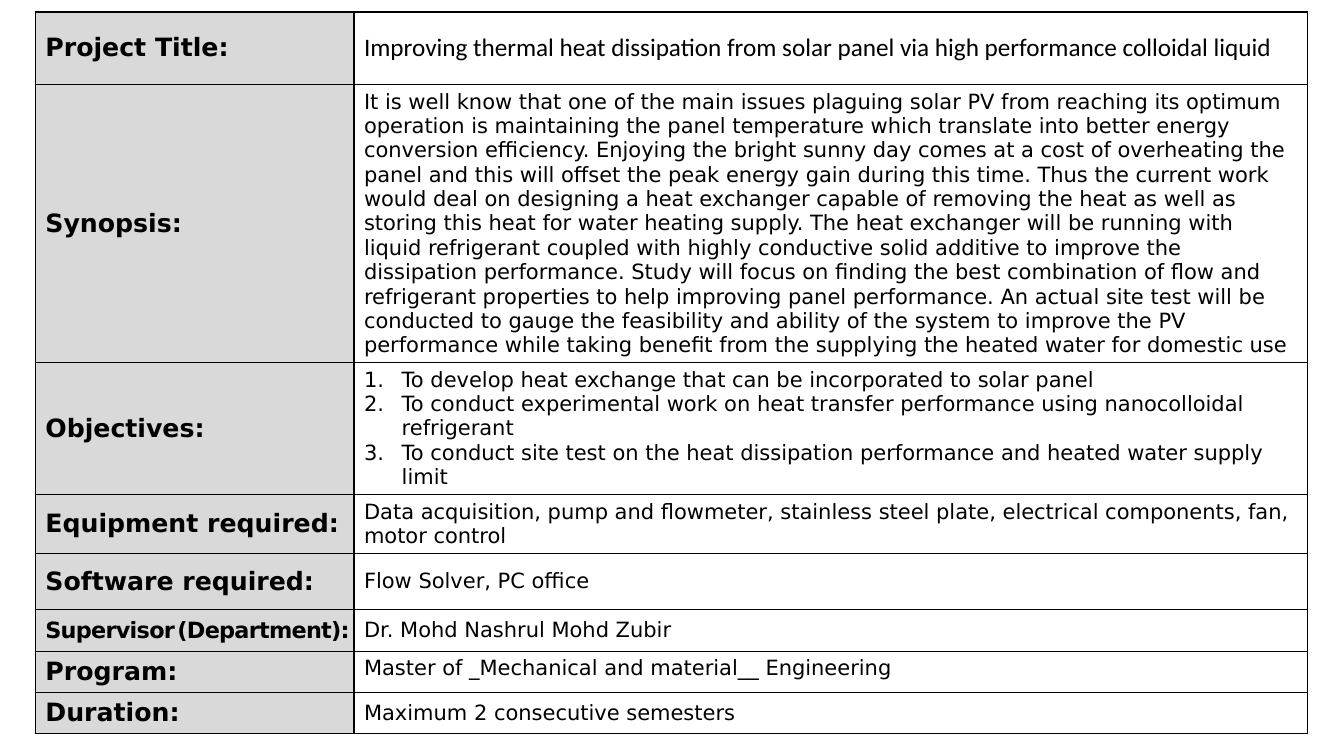
from lxml import etree
from pptx import Presentation
from pptx.dml.color import RGBColor
from pptx.enum.text import MSO_ANCHOR
from pptx.oxml.ns import qn
from pptx.util import Cm, Pt

MIDDLE, TOP = MSO_ANCHOR.MIDDLE, MSO_ANCHOR.TOP
BLACK = RGBColor(0x00, 0x00, 0x00)
GREY = RGBColor(0xD9, 0xD9, 0xD9)
SANS = "DejaVu Sans"
LABEL = {"name": SANS, "size": Pt(18), "bold": True}
BODY = {"name": SANS, "size": Pt(15), "bold": False}
TITLE = {"name": "Calibri", "size": Pt(18), "bold": False}

SYNOPSIS = [
    "It is well know that one of the main issues plaguing solar PV from reaching its optimum",
    "operation is maintaining the panel temperature which translate into better energy",
    "conversion efficiency. Enjoying the bright sunny day comes at a cost of overheating the",
    "panel and this will offset the peak energy gain during this time. Thus the current work",
    "would deal on designing a heat exchanger capable of removing the heat as well as",
    "storing this heat for water heating supply. The heat exchanger will be running with",
    "liquid refrigerant coupled with highly conductive solid additive to improve the",
    "dissipation performance. Study will focus on finding the best combination of flow and",
    "refrigerant properties to help improving panel performance. An actual site test will be",
    "conducted to gauge the feasibility and ability of the system to improve the PV",
    "performance while taking benefit from the supplying the heated water for domestic use",
]
OBJECTIVES = [
    "To develop heat exchange that can be incorporated to solar panel",
    "To conduct experimental work on heat transfer performance using nanocolloidal refrigerant",
    "To conduct site test on the heat dissipation performance and heated water supply limit",
]
ROWS = [
    (1.83, "Project Title:", ["Improving thermal heat dissipation from solar panel "
                              "via high performance colloidal liquid"]),
    (6.76, "Synopsis:", [" ".join(SYNOPSIS)]),
    (2.9, "Objectives:", OBJECTIVES),
    (1.32, "Equipment required:", ["Data acquisition, pump and flowmeter, stainless steel plate, "
                                   "electrical components, fan, motor control"]),
    (1.42, "Software required:", ["Flow Solver, PC office"]),
    (1.04, "Supervisor (Department):", ["Dr. Mohd Nashrul Mohd Zubir"]),
    (1.04, "Program:", ["Master of _Mechanical and material__ Engineering"]),
    (1.04, "Duration:", ["Maximum 2 consecutive semesters"]),
]


def add_run(p, text, style):
    r = p.add_run()
    r.text = text
    for key, value in style.items():
        setattr(r.font, key, value)
    r.font.color.rgb = BLACK
    return r


def add_borders(cell):
    tcPr = cell._tc.get_or_add_tcPr()
    for i, side in enumerate(("lnL", "lnR", "lnT", "lnB")):
        ln = etree.Element(qn(f"a:{side}"), w=str(Pt(1)))
        fill = etree.SubElement(ln, qn("a:solidFill"))
        etree.SubElement(fill, qn("a:srgbClr"), val=str(BLACK))
        tcPr.insert(i, ln)


prs = Presentation()
prs.slide_width, prs.slide_height = Cm(33.87), Cm(19.05)
s = prs.slides.add_slide(prs.slide_layouts[6])

frame = s.shapes.add_table(len(ROWS), 2, Cm(0.89), Cm(0.3), Cm(32.05), Cm(18.52))
table = frame.table
table.first_row = table.horz_banding = False
for column, width in zip(table.columns, (8.03, 24.03)):
    column.width = Cm(width)

for i, (height, label, lines) in enumerate(ROWS):
    table.rows[i].height = Cm(height)
    head, body = table.cell(i, 0), table.cell(i, 1)
    for cell in (head, body):
        cell.vertical_anchor = MIDDLE
        cell.fill.background()
        add_borders(cell)
    head.fill.solid()
    head.fill.fore_color.rgb = GREY

    p = head.text_frame.paragraphs[0]
    if label.startswith("Supervisor"):
        head.margin_right = 0
        for text, size in (("Supervisor", 16), (" ", 5), ("(Department):", 16)):
            r = add_run(p, text, {**LABEL, "size": Pt(size)})
            r._r.get_or_add_rPr().set("spc", "-50")
    else:
        add_run(p, label, LABEL)

    if label == "Program:":
        body.vertical_anchor = TOP
    tf = body.text_frame
    for j, line in enumerate(lines):
        p = tf.add_paragraph() if j else tf.paragraphs[0]
        add_run(p, line, BODY if i else TITLE)
        if lines is OBJECTIVES:
            pPr = p._p.get_or_add_pPr()
            pPr.set("marL", str(Cm(0.95)))
            pPr.set("indent", str(-Cm(0.95)))
            etree.SubElement(pPr, qn("a:buFont"), typeface="+mj-lt")
            etree.SubElement(pPr, qn("a:buAutoNum"), type="arabicPeriod")

frame.height = Cm(18.52)
prs.save("out.pptx")
